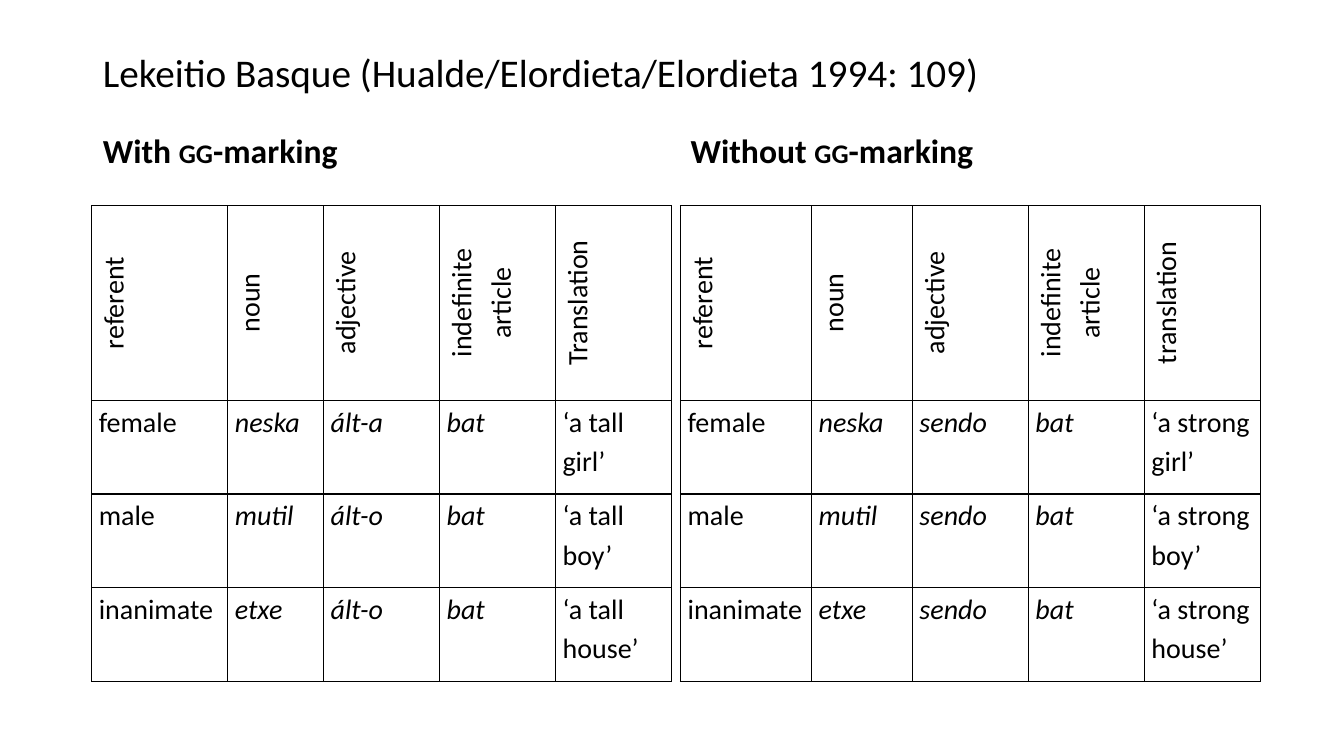
from lxml import etree
from pptx import Presentation
from pptx import util as u
from pptx.dml.color import RGBColor
from pptx.enum import text
from pptx.oxml.ns import qn

# Content
TITLE = "Lekeitio Basque (Hualde/Elordieta/Elordieta 1994: 109)"
REFERENTS = [("female", "neska", "girl"), ("male", "mutil", "boy"),
             ("inanimate", "etxe", "house")]
HEADER = ["referent", "noun", "adjective", "indefinite article"]
PANELS = [
    dict(lead="With ", head_box=(92, 115, 564, 59), left=91, last="Translation",
         cols=[135, 95, 115, 115, 115], adjectives=["ált-a", "ált-o", "ált-o"], gloss="tall"),
    dict(lead="Without ", head_box=(675, 115, 567, 59), left=675, last="translation",
         cols=[130, 100, 115, 115, 115], adjectives=["sendo"] * 3, gloss="strong"),
]
TITLE_BOX = (92, 40, 1150, 68)
TABLE_TOP, ROWS = 204, [193, 93, 93, 93]
ITALIC_COLS = (1, 2, 3)
BLACK = "000000"


def px(n):
    return u.Emu(n * 9144)  # 100 px to the inch


def color(value):
    return RGBColor.from_string(value)


def set_all(obj, **values):
    for name, value in values.items():
        setattr(obj, name, value)


def add_run(p, words, size, bold=False, italic=False):
    r = p.add_run()
    r.text = words
    set_all(r.font, name="Calibri", size=u.Pt(size), bold=bold, italic=italic)
    r.font.color.rgb = color(BLACK)
    return r


def fill_placeholder(sp, box, runs, size, bold, anchor, before):
    set_all(sp, **dict(zip(("left", "top", "width", "height"), map(px, box))))
    tf = sp.text_frame
    set_all(tf, word_wrap=True, auto_size=text.MSO_AUTO_SIZE.NONE, vertical_anchor=anchor)
    p = tf.paragraphs[0]
    set_all(p, alignment=text.PP_ALIGN.LEFT, line_spacing=0.9, space_before=u.Pt(before))
    for words, small_caps in runs:
        r = add_run(p, words, size, bold)
        if small_caps:
            r.font._element.set("cap", "small")


def add_borders(tcPr):
    for side in ("lnL", "lnR", "lnT", "lnB"):
        ln = etree.SubElement(tcPr, qn("a:" + side), w=str(u.Pt(1)))
        solid = etree.SubElement(ln, qn("a:solidFill"))
        etree.SubElement(solid, qn("a:srgbClr"), val=BLACK)


def format_cell(cell, words, row, col):
    set_all(cell, margin_left=px(7), margin_right=px(7), margin_top=0, margin_bottom=0)
    tcPr = cell._tc.get_or_add_tcPr()
    add_borders(tcPr)
    cell.fill.background()
    p = cell.text_frame.paragraphs[0]
    p.line_spacing = 1.15
    if row == 0:
        tcPr.set("vert", "vert270")
        p.alignment = text.PP_ALIGN.CENTER
    add_run(p, words, 20, italic=row > 0 and col in ITALIC_COLS)


def add_paradigm(s, panel):
    data = [HEADER + [panel["last"]]]
    for (referent, noun, meaning), adjective in zip(REFERENTS, panel["adjectives"]):
        data.append([referent, noun, adjective, "bat", f"‘a {panel['gloss']} {meaning}’"])
    cols = panel["cols"]
    table = s.shapes.add_table(len(ROWS), len(cols), px(panel["left"]), px(TABLE_TOP),
                               px(sum(cols)), px(sum(ROWS))).table
    set_all(table, first_row=False, horz_banding=False)
    for column, width in zip(table.columns, cols):
        column.width = px(width)
    for i, (row, height) in enumerate(zip(table.rows, ROWS)):
        row.height = px(height)
        for j, words in enumerate(data[i]):
            format_cell(table.cell(i, j), words, i, j)


def main():
    prs = Presentation()
    set_all(prs, slide_width=px(1333), slide_height=px(750))
    s = prs.slides.add_slide(prs.slide_layouts.get_by_name("Comparison"))
    holders = {sp.placeholder_format.idx: sp for sp in s.placeholders}

    # Title
    fill_placeholder(holders[0], TITLE_BOX, [(TITLE, False)], 28, False,
                     text.MSO_ANCHOR.MIDDLE, 0)

    # Headings and tables
    for idx, panel in zip((1, 3), PANELS):
        runs = [(panel["lead"], False), ("gg", True), ("-marking", False)]
        fill_placeholder(holders[idx], panel["head_box"], runs, 24, True,
                         text.MSO_ANCHOR.BOTTOM, 10)
        add_paradigm(s, panel)

    # Unused content placeholders
    for idx in (2, 4):
        s.shapes._spTree.remove(holders[idx]._element)
    prs.save("out.pptx")


if __name__ == "__main__":
    main()
